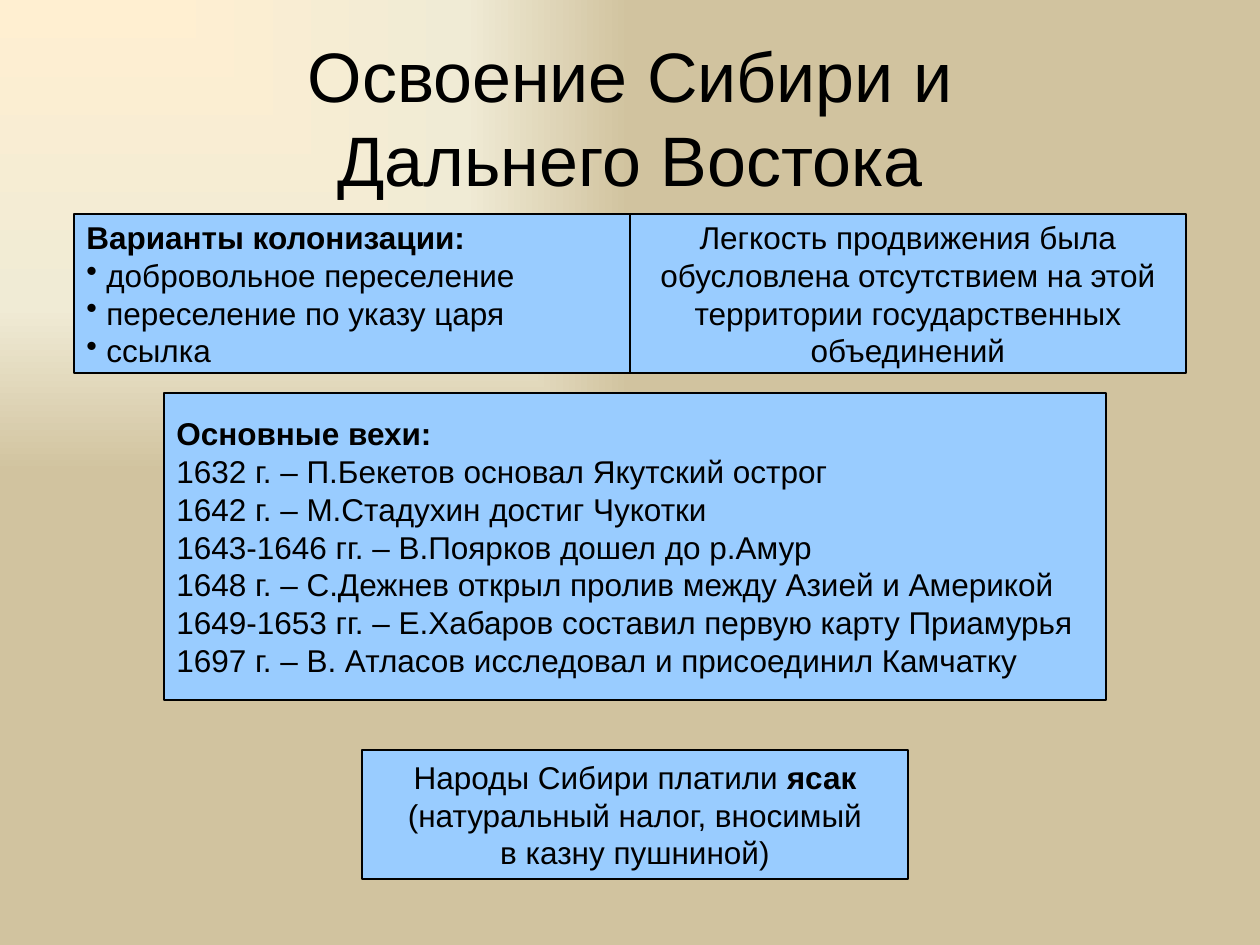
from dataclasses import dataclass
from pptx import Presentation, util as u
from pptx.dml.color import RGBColor
from pptx.enum import shapes, text
from pptx.oxml import parse_xml, ns, xmlchemy as x

PX = 914400 / 126
FONT = "Arial"
INDENT = 20
COLORS = {"ink": "000000", "box": "99CCFF",
          "cream": "FFEFD1", "pale": "F0EBD5", "sand": "D1C39F"}
LEFT, MID = text.PP_ALIGN.LEFT, text.PP_ALIGN.CENTER


@dataclass
class Line:
    words: str
    bold: bool = False
    tail: str = ""
    bullet: bool = False


@dataclass
class Box:
    left: int
    top: int
    width: int
    height: int
    align: text.PP_ALIGN
    lines: list[Line]


BOXES = [
    Box(74, 214, 556, 159, LEFT, [
        Line("Варианты колонизации:", bold=True),
        Line("добровольное переселение", bullet=True),
        Line("переселение по указу царя", bullet=True),
        Line("ссылка", bullet=True)]),
    Box(630, 214, 556, 159, MID, [
        Line("Легкость продвижения была"),
        Line("обусловлена отсутствием на этой"),
        Line("территории государственных"),
        Line("объединений")]),
    Box(164, 393, 942, 307, LEFT, [
        Line("Основные вехи:", bold=True),
        Line("1632 г. – П.Бекетов основал Якутский острог"),
        Line("1642 г. – М.Стадухин достиг Чукотки"),
        Line("1643-1646 гг. – В.Поярков дошел до р.Амур"),
        Line("1648 г. – С.Дежнев открыл пролив между Азией и Америкой"),
        Line("1649-1653 гг. – Е.Хабаров составил первую карту Приамурья"),
        Line("1697 г. – В. Атласов исследовал и присоединил Камчатку")]),
    Box(362, 750, 546, 129, MID, [
        Line("Народы Сибири платили ", tail="ясак"),
        Line("(натуральный налог, вносимый"),
        Line("в казну пушниной)")]),
]


def emu(px: int) -> int:
    return round(px * PX)


def rgb(name: str) -> RGBColor:
    return RGBColor.from_string(COLORS[name])


def style(para, size: int, align: text.PP_ALIGN) -> None:
    para.alignment = align
    para.font.name = FONT
    para.font.size = u.Pt(size)
    para.font.color.rgb = rgb("ink")


def add_bullet(para) -> None:
    props = para._p.get_or_add_pPr()
    props.set("marL", str(emu(INDENT)))
    props.set("indent", str(-emu(INDENT)))
    props.append(parse_xml(f'<a:buChar {ns.nsdecls("a")} char="•"/>'))


def paint_back(slide) -> None:
    stops = "".join(
        f'<a:gs pos="{pos * 1000}"><a:srgbClr val="{COLORS[name]}"/></a:gs>'
        for pos, name in ((0, "cream"), (65, "pale"), (100, "sand")))
    slide.element.cSld.insert(0, parse_xml(
        f'<p:bg {ns.nsdecls("p", "a")}><p:bgPr><a:gradFill rotWithShape="1">'
        f'<a:gsLst>{stops}</a:gsLst><a:path path="rect">'
        '<a:fillToRect r="100000" b="100000"/></a:path></a:gradFill>'
        '<a:effectLst/></p:bgPr></p:bg>'))


def set_title(slide, words: str) -> None:
    title = slide.shapes.title
    title.left, title.top, title.width, title.height = map(
        emu, (63, 38, 1134, 158))
    frame = title.text_frame
    frame.text = words
    frame.vertical_anchor = text.MSO_ANCHOR.MIDDLE
    style(frame.paragraphs[0], 40, MID)


def draw_box(slide, box: Box) -> None:
    shape = slide.shapes.add_shape(
        shapes.MSO_SHAPE.RECTANGLE,
        *map(emu, (box.left, box.top, box.width, box.height)))
    shape.shadow.inherit = False
    shape.fill.solid()
    shape.fill.fore_color.rgb = rgb("box")
    shape.line.color.rgb = rgb("ink")
    shape.line.width = u.Pt(0.75)
    frame = shape.text_frame
    frame.word_wrap = False
    frame.vertical_anchor = text.MSO_ANCHOR.MIDDLE
    for i, line in enumerate(box.lines):
        para = frame.add_paragraph() if i else frame.paragraphs[0]
        if line.bullet:
            add_bullet(para)
        style(para, 18, box.align)
        para.add_run().text = line.words
        if line.bold:
            para.font.bold = True
        if line.tail:
            run = para.add_run()
            run.text = line.tail
            run.font.bold = True


def main() -> None:
    deck = Presentation()
    deck.slide_width, deck.slide_height = emu(1260), emu(945)
    slide = deck.slides.add_slide(deck.slide_layouts[5])
    paint_back(slide)
    set_title(slide, "Освоение Сибири и\vДальнего Востока")
    for box in BOXES:
        draw_box(slide, box)
    deck.save("out.pptx")


if __name__ == "__main__":
    main()
